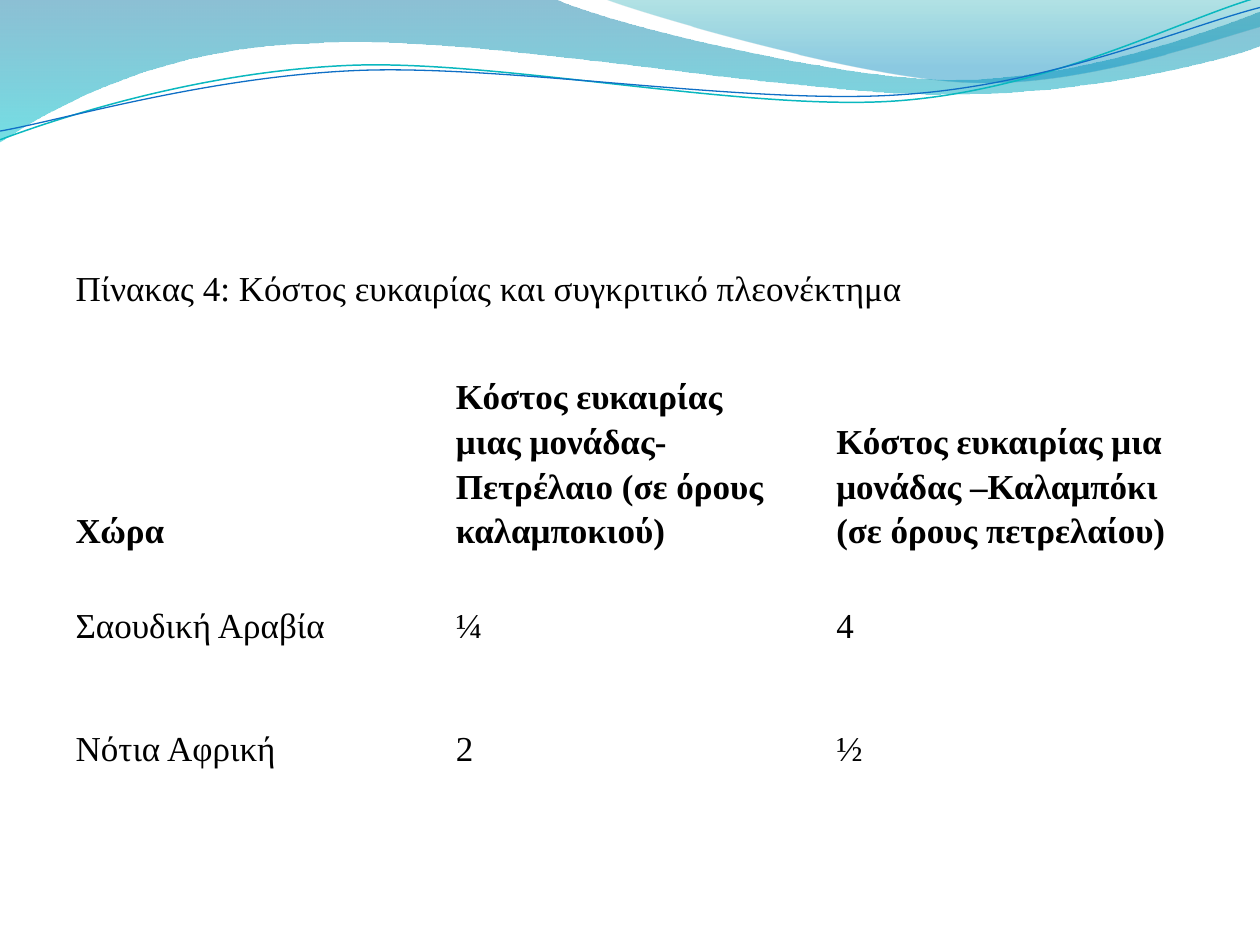
from dataclasses import dataclass
from math import cos, radians, sin

from pptx import Presentation
from pptx.dml.color import RGBColor
from pptx.enum.text import MSO_ANCHOR as Anchor
from pptx.oxml.ns import qn
from pptx.util import Pt
from lxml.etree import SubElement


@dataclass(frozen=True)
class Theme:
    font: str = "Times New Roman"
    text_size: float = 20
    text: str = "000000"
    # Gradient stops: position, colour, opacity in percent
    wide_wave: tuple = ((0, "0074A1", 45), (1, "00C6CF", 55))
    crest: tuple = ((0, "00A1A9", 30), (0.8, "008BBF", 45))
    upper_line: str = "0AB8BF"
    lower_line: str = "0F6FC6"


THEME = Theme()

# Outlines relative to the header box: one point is a straight step,
# three are a Bézier step (two control points and an end point).
WIDE_WAVE = [
    [(0, 0)], [(316.8, -0.7)],
    [(342.7, 12.2), (478, 45.4), (545.8, 45.4)],
    [(614.2, 45.4), (689.8, 18.7), (720, 6.5)],
    [(720.7, 25.9)],
    [(707.8, 31.7), (626.4, 54.7), (537.1, 54)],
    [(447.8, 54), (275, 20.2), (185, 24.5)],
    [(92.9, 25.9), (33.1, 59.8), (-0.7, 81.4)],
    [(0, 0)],
]
CREST = [
    [(344.9, -0.7)],
    [(366.5, 7.9), (491, 44.6), (553.7, 46.8)],
    [(616.3, 49.7), (691.9, 23), (720, 15.1)],
    [(720, 0)], [(344.9, -0.7)],
]
UPPER_LINE = [
    [(0, 79.9)],
    [(34.6, 67), (113.8, 41), (199.4, 37.4)],
    [(284.4, 33.8), (427, 64.1), (513.4, 57.6)],
    [(599.8, 51.1), (675.4, 10.8), (718.6, -1.4)],
]
LOWER_LINE = [
    [(0, 74.9)],
    [(33.8, 69.1), (118.1, 43.9), (203.8, 40.3)],
    [(290.2, 36.7), (429.8, 60.5), (516.2, 54)],
    [(601.9, 48.2), (677.5, 15.1), (720, 4.3)],
]
LINE_TILT = -2.7
LINE_CENTER = (360, 42)

CAPTION = "Πίνακας 4: Κόστος ευκαιρίας και συγκριτικό πλεονέκτημα"
ROWS = [
    ("Χώρα",
     "Κόστος ευκαιρίας μιας μονάδας-Πετρέλαιο (σε όρους καλαμποκιού)",
     "Κόστος ευκαιρίας μια μονάδας –Καλαμπόκι (σε όρους πετρελαίου)"),
    ("Σαουδική Αραβία", "¼", "4"),
    ("Νότια Αφρική", "2", "½"),
]
ROW_HEIGHTS = (70.6, 122, 70.6, 70.6)


def rotate(point, degrees, center):
    angle = radians(degrees)
    x, y = point[0] - center[0], point[1] - center[1]
    return (center[0] + x * cos(angle) - y * sin(angle),
            center[1] + x * sin(angle) + y * cos(angle))


def add_outline(slide, left, top, steps, close):
    """Add a freeform whose Bézier steps become true curve segments."""
    steps = [[(Pt(left + x), Pt(top + y)) for x, y in step] for step in steps]
    anchors = [step[-1] for step in steps]
    builder = slide.shapes.build_freeform(*anchors[0])
    builder.add_line_segments(anchors[1:], close=close)
    shape = builder.convert_to_shape()
    shape.shadow.inherit = False
    segments = list(shape._element.iter(qn("a:lnTo")))
    for segment, step in zip(segments, steps[1:]):
        if len(step) == 3:
            segment.tag = qn("a:cubicBezTo")
            for point in list(segment):
                segment.remove(point)
            for x, y in step:
                SubElement(segment, qn("a:pt"),
                           x=str(x - shape.left), y=str(y - shape.top))
    return shape


def add_wave(slide, left, top, steps, stops):
    shape = add_outline(slide, left, top, steps, close=True)
    shape.line.fill.background()
    shape.fill.gradient()
    shape.fill.gradient_angle = 270
    for stop, (position, color, _) in zip(shape.fill.gradient_stops, stops):
        stop.position = position
        stop.color.rgb = RGBColor.from_string(color)
    colors = shape._element.spPr.iter(qn("a:srgbClr"))
    for element, (_, _, opacity) in zip(colors, stops):
        SubElement(element, qn("a:alpha"), val=str(opacity * 1000))


def add_tilted_line(slide, left, top, steps, color, width):
    level = [[rotate(point, -LINE_TILT, LINE_CENTER) for point in step] for step in steps]
    shape = add_outline(slide, left, top, level, close=False)
    shape.rotation = LINE_TILT
    shape.fill.background()
    shape.line.color.rgb = RGBColor.from_string(color)
    shape.line.width = Pt(width)


def add_header(slide, left, top):
    add_wave(slide, left, top, WIDE_WAVE, THEME.wide_wave)
    add_wave(slide, left, top, CREST, THEME.crest)
    add_tilted_line(slide, left, top, UPPER_LINE, THEME.upper_line, 0.85)
    add_tilted_line(slide, left, top, LOWER_LINE, THEME.lower_line, 0.75)


def fill_cell(cell, text, bold=False, anchor=Anchor.MIDDLE):
    cell.vertical_anchor = anchor
    cell.margin_left = cell.margin_right = Pt(12.2)
    cell.margin_top = cell.margin_bottom = Pt(6)
    paragraph = cell.text_frame.paragraphs[0]
    paragraph.line_spacing = 1.15
    run = paragraph.add_run()
    run.text = text
    run.font.name = THEME.font
    run.font.size = Pt(THEME.text_size)
    run.font.bold = bold
    run.font.color.rgb = RGBColor.from_string(THEME.text)


def add_cost_table(slide, left, top, width):
    columns = len(ROWS[0])
    table = slide.shapes.add_table(
        len(ROW_HEIGHTS), columns, Pt(left), Pt(top), Pt(width), Pt(sum(ROW_HEIGHTS))).table
    table.first_row = table.horz_banding = False
    for row, height in zip(table.rows, ROW_HEIGHTS):
        row.height = Pt(height)
    for cell in table.iter_cells():
        cell.fill.background()
    table.cell(0, 0).merge(table.cell(0, columns - 1))
    fill_cell(table.cell(0, 0), CAPTION)
    for row_index, texts in enumerate(ROWS, start=1):
        heading = row_index == 1
        for column_index, text in enumerate(texts):
            fill_cell(table.cell(row_index, column_index), text, bold=heading,
                      anchor=Anchor.BOTTOM if heading else Anchor.MIDDLE)


def main():
    presentation = Presentation()
    presentation.slide_width, presentation.slide_height = Pt(720), Pt(540)
    slide = presentation.slides.add_slide(presentation.slide_layouts[6])
    add_header(slide, left=0, top=0)
    add_cost_table(slide, left=31, top=128.5, width=652)
    presentation.save("out.pptx")


if __name__ == "__main__":
    main()
